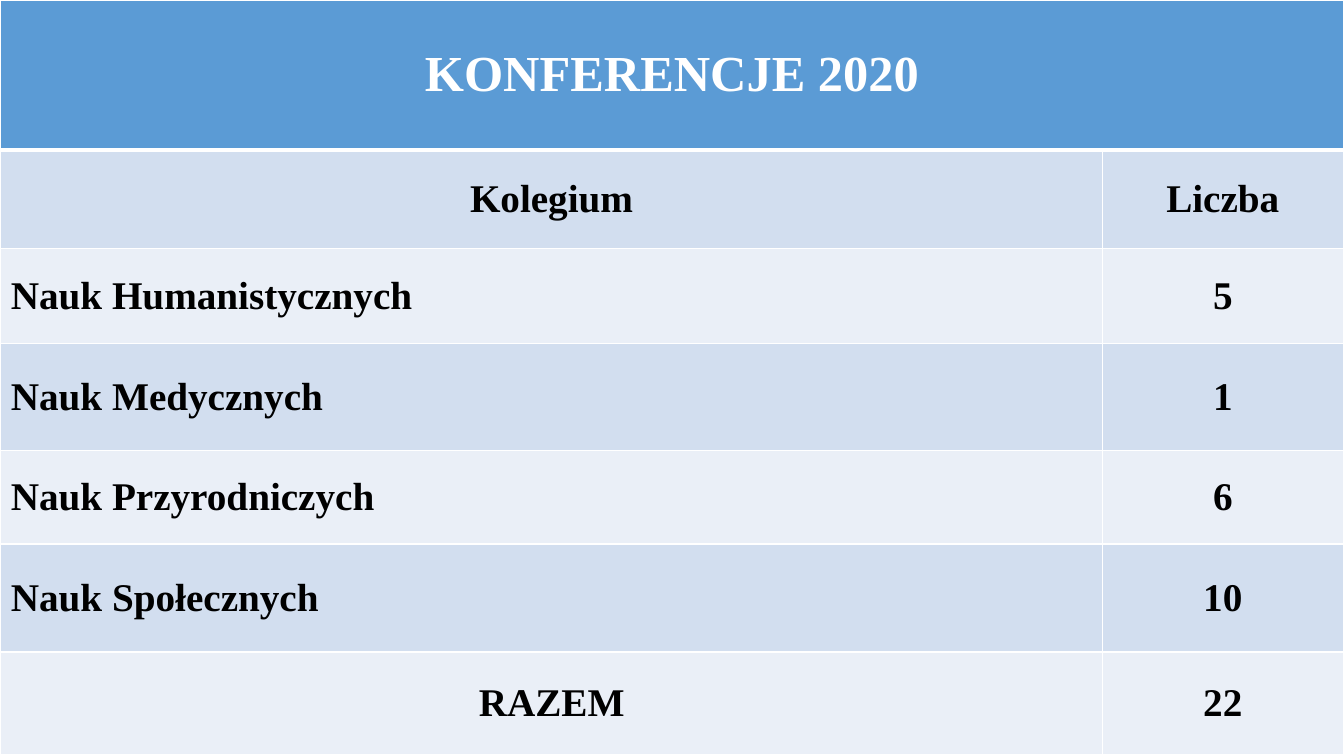
from collections import namedtuple
from dataclasses import dataclass

from lxml import etree
from pptx import Presentation
from pptx import util as u
from pptx.dml import color
from pptx.enum import text
from pptx.oxml import ns

Box = namedtuple("Box", "left top width height")


@dataclass(frozen=True)
class Theme:
    font: str = "Times New Roman"
    header_size: int = 36
    body_size: int = 28
    header_fill: str = "5B9BD5"
    bands: tuple = ("D2DEEF", "EAEFF7")
    white: str = "FFFFFF"
    black: str = "000000"
    border: int = 1
    header_rule: int = 3


THEME = Theme()
HEADING = "KONFERENCJE 2020"
ROWS = [
    ("Kolegium", "Liczba"),
    ("Nauk Humanistycznych", "5"),
    ("Nauk Medycznych", "1"),
    ("Nauk Przyrodniczych", "6"),
    ("Nauk Społecznych", "10"),
    ("RAZEM", "22"),
]
ROW_HEIGHTS = (3.78, 2.49, 2.39, 2.69, 2.36, 2.72, 2.59)
COUNT_WIDTH = 6.07


def draw_borders(cell, top, bottom):
    properties = cell._tc.get_or_add_tcPr()
    widths = {"L": THEME.border, "R": THEME.border, "T": top, "B": bottom}
    for side, width in widths.items():
        line = etree.SubElement(properties, ns.qn(f"a:ln{side}"), w=str(u.Pt(width)))
        fill = etree.SubElement(line, ns.qn("a:solidFill"))
        etree.SubElement(fill, ns.qn("a:srgbClr"), val=THEME.white)


def paint_cell(cell, fill, top, bottom):
    draw_borders(cell, top, bottom)
    cell.fill.solid()
    cell.fill.fore_color.rgb = color.RGBColor.from_string(fill)
    cell.vertical_anchor = text.MSO_ANCHOR.MIDDLE


def write_cell(cell, words, size, ink, centred):
    para = cell.text_frame.paragraphs[0]
    para.text = words
    para.alignment = text.PP_ALIGN.CENTER if centred else text.PP_ALIGN.LEFT
    font = para.runs[0].font
    font.name = THEME.font
    font.size = u.Pt(size)
    font.bold = True
    font.color.rgb = color.RGBColor.from_string(ink)


def add_conference_table(page, box):
    frame = page.shapes.add_table(len(ROW_HEIGHTS), 2, *map(u.Cm, box))
    table = frame.table
    table.columns[0].width = u.Cm(box.width - COUNT_WIDTH)
    table.columns[1].width = u.Cm(COUNT_WIDTH)
    for row, height in zip(table.rows, ROW_HEIGHTS):
        row.height = u.Cm(height)

    for cell in table.rows[0].cells:
        paint_cell(cell, THEME.header_fill, THEME.border, THEME.header_rule)
    heading = table.cell(0, 0)
    heading.merge(table.cell(0, 1))
    write_cell(heading, HEADING, THEME.header_size, THEME.white, True)

    for index, values in enumerate(ROWS):
        top = THEME.header_rule if index == 0 else THEME.border
        is_label_centred = index in (0, len(ROWS) - 1)
        for column, words in enumerate(values):
            cell = table.cell(index + 1, column)
            paint_cell(cell, THEME.bands[index % 2], top, THEME.border)
            write_cell(cell, words, THEME.body_size, THEME.black,
                       column == 1 or is_label_centred)


def main():
    deck = Presentation()
    deck.slide_width = u.Cm(33.87)
    deck.slide_height = u.Cm(19.05)
    page = deck.slides.add_slide(deck.slide_layouts[6])
    add_conference_table(page, Box(0.02, 0, 33.83, sum(ROW_HEIGHTS)))
    deck.save("out.pptx")


if __name__ == "__main__":
    main()
